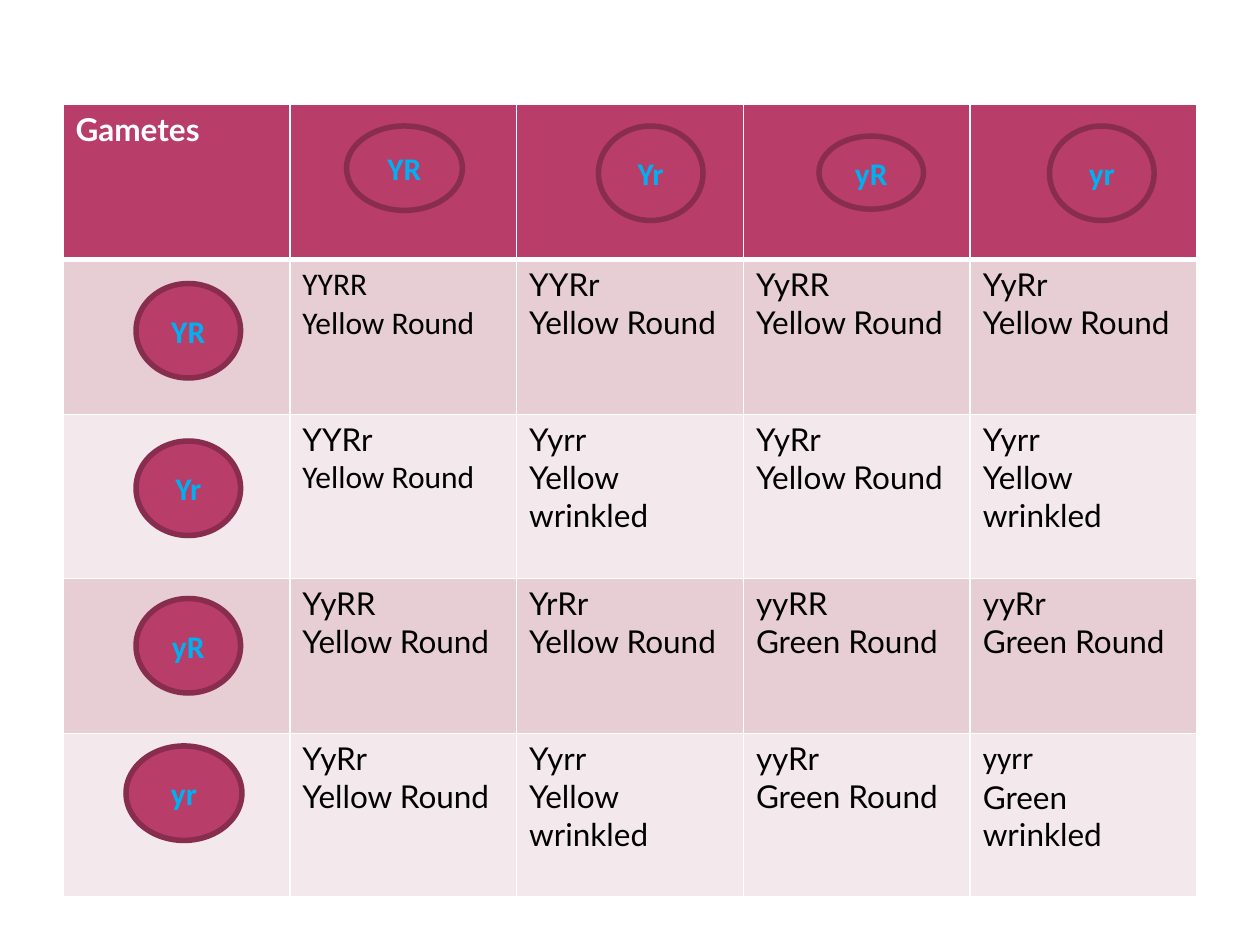
"""Build a slide with the Punnett square of a dihybrid pea cross."""
import lxml.etree
import pptx
import pptx.dml.color
import pptx.enum.shapes
import pptx.enum.text
import pptx.oxml.ns
import pptx.util

Inches = pptx.util.Inches
Pt = pptx.util.Pt
RGBColor = pptx.dml.color.RGBColor
qn = pptx.oxml.ns.qn

WHITE = RGBColor(0xFF, 0xFF, 0xFF)
BLACK = RGBColor(0, 0, 0)
ROSE = RGBColor(0xB8, 0x3D, 0x68)
DARK_ROSE = RGBColor(0x88, 0x2D, 0x4D)
PINK = RGBColor(0xE6, 0xCE, 0xD4)
PALE_PINK = RGBColor(0xF3, 0xE8, 0xEB)
BLUE = RGBColor(0x00, 0xB0, 0xF0)

ROUND, WRINKLED = "Yellow Round", "Yellow wrinkled"
GREEN_ROUND, GREEN_WRINKLED = "Green Round", "Green wrinkled"
OFFSPRING = [
    [("YYRR", ROUND), ("YYRr", ROUND), ("YyRR", ROUND), ("YyRr", ROUND)],
    [("YYRr", ROUND), ("Yyrr", WRINKLED), ("YyRr", ROUND), ("Yyrr", WRINKLED)],
    [("YyRR", ROUND), ("YrRr", ROUND), ("yyRR", GREEN_ROUND), ("yyRr", GREEN_ROUND)],
    [("YyRr", ROUND), ("Yyrr", WRINKLED), ("yyRr", GREEN_ROUND), ("yyrr", GREEN_WRINKLED)],
]
CALIBRI_LINES = {(1, 1, 0), (1, 1, 1), (2, 1, 1), (4, 4, 0)}
ROW_HEIGHTS = [1.23, 1.23, 1.3, 1.23, 1.3]
COLUMN_WIDTH = 1.8
GAMETES = [
    ("YR", 2.75, 1, 0.92, 0.67),
    ("Yr", 4.75, 1, 0.83, 0.75),
    ("yR", 6.5, 1.08, 0.83, 0.58),
    ("yr", 8.33, 1, 0.83, 0.75),
    ("YR", 1.08, 2.25, 0.83, 0.75),
    ("Yr", 1.08, 3.5, 0.83, 0.75),
    ("yR", 1.08, 4.75, 0.83, 0.75),
    ("yr", 1, 5.92, 0.92, 0.75),
]


def write(paragraph, text, font="Lato", size=18, color=BLACK, bold=False, align=None):
    """Add a formatted run to a paragraph."""
    run = paragraph.add_run()
    run.text = text
    run.font.name = font
    run.font.size = Pt(size)
    run.font.color.rgb = color
    run.font.bold = bold
    paragraph.alignment = align


def style_cell(cell, fill, bottom_width=1):
    """Give a cell its white borders and its fill."""
    properties = cell._tc.get_or_add_tcPr()
    for side, width in (("L", 1), ("R", 1), ("T", 1), ("B", bottom_width)):
        border = lxml.etree.SubElement(properties, qn(f"a:ln{side}"), w=str(Pt(width)))
        solid = lxml.etree.SubElement(border, qn("a:solidFill"))
        lxml.etree.SubElement(solid, qn("a:srgbClr"), val=str(WHITE))
    cell.fill.solid()
    cell.fill.fore_color.rgb = fill


def add_punnett_square(slide):
    """Add the table of gametes and their offspring."""
    count = len(ROW_HEIGHTS)
    square = slide.shapes.add_table(
        count, count, Inches(0.5), Inches(0.83),
        Inches(COLUMN_WIDTH * count), Inches(sum(ROW_HEIGHTS))).table
    for column in square.columns:
        column.width = Inches(COLUMN_WIDTH)
    for row, height in enumerate(ROW_HEIGHTS):
        square.rows[row].height = Inches(height)
        for column in range(count):
            cell = square.cell(row, column)
            if row == 0:
                style_cell(cell, ROSE, bottom_width=3)
            else:
                style_cell(cell, PINK if row % 2 else PALE_PINK)
            if row and column:
                add_offspring(cell, row, column)
    write(square.cell(0, 0).text_frame.paragraphs[0], "Gametes", color=WHITE, bold=True)


def add_offspring(cell, row, column):
    """Write genotype and phenotype as two paragraphs of a cell."""
    frame = cell.text_frame
    for line, text in enumerate(OFFSPRING[row - 1][column - 1]):
        paragraph = frame.add_paragraph() if line else frame.paragraphs[0]
        font = "Calibri" if (row, column, line) in CALIBRI_LINES else "Lato"
        write(paragraph, text, font=font)


def add_gamete(slide, alleles, left, top, width, height):
    """Add an outlined ellipse with the alleles of a gamete."""
    gamete = slide.shapes.add_shape(
        pptx.enum.shapes.MSO_SHAPE.OVAL,
        Inches(left), Inches(top), Inches(width), Inches(height))
    gamete.shadow.inherit = False
    gamete.fill.solid()
    gamete.fill.fore_color.rgb = ROSE
    gamete.line.color.rgb = DARK_ROSE
    gamete.line.width = Pt(3.15)
    frame = gamete.text_frame
    frame.vertical_anchor = pptx.enum.text.MSO_ANCHOR.MIDDLE
    write(frame.paragraphs[0], alleles, font="Calibri", color=BLUE, bold=True,
          align=pptx.enum.text.PP_ALIGN.CENTER)


def main():
    """Build and save the slide."""
    presentation = pptx.Presentation()
    presentation.slide_width = Inches(10)
    presentation.slide_height = Inches(7.5)
    slide = presentation.slides.add_slide(presentation.slide_layouts[6])
    add_punnett_square(slide)
    for gamete in GAMETES:
        add_gamete(slide, *gamete)
    presentation.save("out.pptx")


if __name__ == "__main__":
    main()
